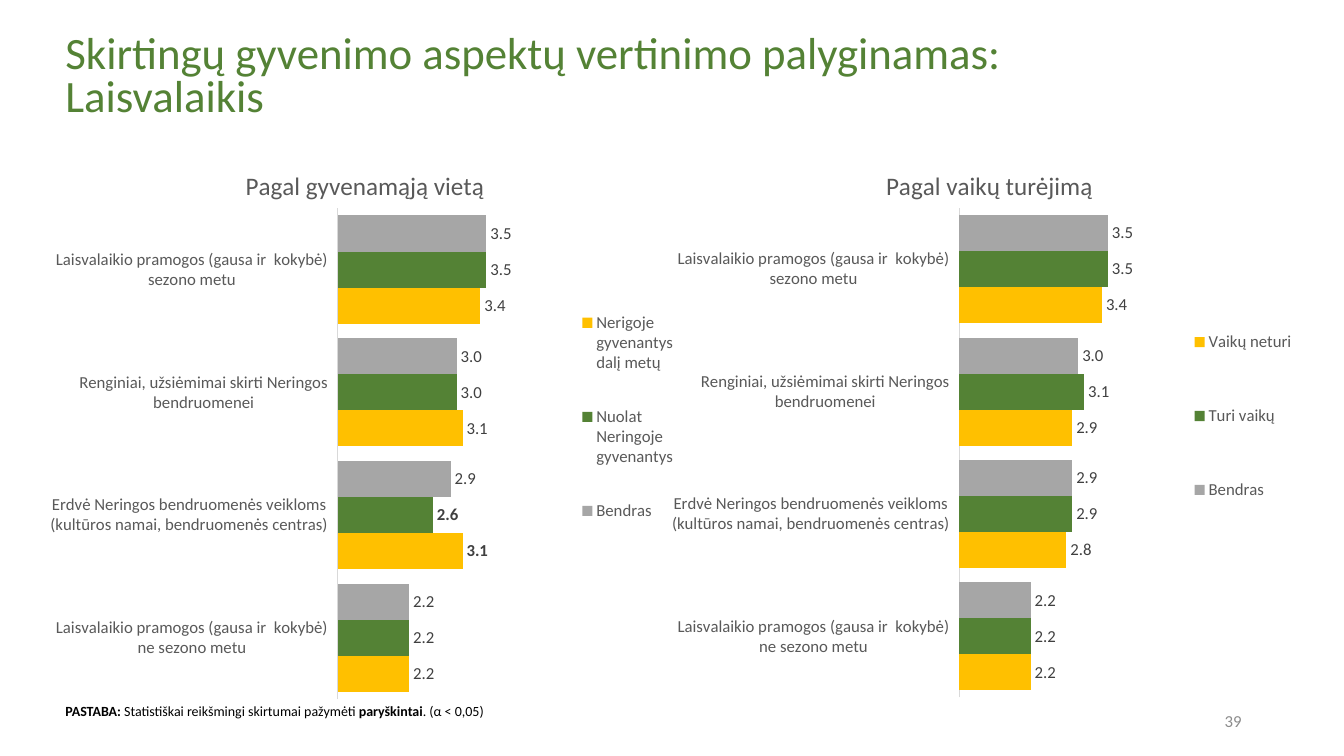
from pptx import Presentation
from pptx.chart.data import CategoryChartData as Data
from pptx.dml.color import RGBColor as RGB
from pptx.enum.chart import XL_CHART_TYPE as Kind, XL_LABEL_POSITION as Pos
from pptx.enum.chart import XL_LEGEND_POSITION as Side, XL_TICK_MARK as Tick
from pptx.enum.chart import XL_TICK_LABEL_POSITION as Spot
from pptx.enum.text import MSO_ANCHOR as Anchor, PP_ALIGN as Align
from pptx.oxml.ns import qn
from pptx.oxml.xmlchemy import OxmlElement as Node
from pptx.util import Inches, Pt

WIDE, HIGH = Inches(13.33), Inches(7.5)
COLS, ROWS = 160, 90
HUES = {"green": "548235", "gold": "FFC000", "grey": "A6A6A6", "text": "595959",
        "value": "404040", "axis": "D9D9D9", "page": "8C8C8C", "black": "000000"}
FORM = "#,##0.0"
TOPICS = [
    "Laisvalaikio pramogos (gausa ir  kokybė) sezono metu",
    "Renginiai, užsiėmimai skirti Neringos bendruomenei",
    "Erdvė Neringos bendruomenės veikloms (kultūros namai, bendruomenės centras)",
    "Laisvalaikio pramogos (gausa ir  kokybė) ne sezono metu",
]
TOTAL = ("Bendras", [3.5, 3.0, 2.9, 2.2])


def hue(name):
    return RGB.from_string(HUES[name])


def put(item, form):
    for key, val in form.items():
        setattr(item, key, val)


def ink(font, size, name, bold=False):
    put(font, {"name": "Calibri", "size": Pt(size), "bold": bold})
    font.color.rgb = hue(name)


def area(col, row, cols, rows):
    """Turn grid cells into slide lengths."""
    return (int(WIDE * col / COLS), int(HIGH * row / ROWS),
            int(WIDE * cols / COLS), int(HIGH * rows / ROWS))


def text(slide, cells, runs, size, name, anchor=Anchor.TOP, **form):
    frame = slide.shapes.add_textbox(*area(*cells)).text_frame
    put(frame, {"word_wrap": True, "vertical_anchor": anchor})
    para = frame.paragraphs[0]
    put(para, form)
    for words, bold in runs:
        run = para.add_run()
        run.text = words
        ink(run.font, size, name, bold)


def place(part, index, inner=False, **spots):
    """Fix a chart part at shares of the chart's size."""
    for old in part.findall(qn("c:layout")):
        part.remove(old)
    layout, manual = Node("c:layout"), Node("c:manualLayout")
    layout.append(manual)
    marks = {"layoutTarget": "inner"} if inner else {}
    marks.update({"xMode": "edge", "yMode": "edge"}, **spots)
    for tag, val in marks.items():
        node = Node("c:" + tag)
        node.set("val", str(val))
        manual.append(node)
    part.insert(index, layout)


def axes(chart):
    axis = chart.category_axis
    put(axis, {"reverse_order": True, "major_tick_mark": Tick.NONE,
               "minor_tick_mark": Tick.NONE, "has_major_gridlines": False,
               "tick_label_position": Spot.LOW})
    ink(axis.tick_labels.font, 12, "text")
    axis.format.line.color.rgb = hue("axis")
    axis.format.line.width = Pt(0.75)
    put(chart.value_axis, {"minimum_scale": 1, "maximum_scale": 5,
                           "has_major_gridlines": False, "visible": False})


def paint(row, name, bold):
    """Colour one series and label its bars."""
    row.format.fill.solid()
    row.format.fill.fore_color.rgb = hue(name)
    row.invert_if_negative = False
    tags = row.data_labels
    put(tags, {"show_value": True, "position": Pos.OUTSIDE_END,
               "number_format": FORM, "number_format_is_linked": False})
    ink(tags.font, 12, "value")
    for spot in bold:
        tag = row.points[spot].data_label
        ink(tag.font, 12, "value", True)
        tag.position = Pos.OUTSIDE_END


def bars(slide, cells, title, left, rows, key, bold=()):
    data = Data(number_format=FORM)
    data.categories = TOPICS
    for name, vals in rows:
        data.add_series(name, vals)
    chart = slide.shapes.add_chart(Kind.BAR_CLUSTERED, *area(*cells), data).chart
    ink(chart.font, 10, "black")

    # Heading
    chart.has_title = True
    head = chart.chart_title
    head.text_frame.text = title
    ink(head.text_frame.paragraphs[0].runs[0].font, 18, "text")
    place(head._element, 1, x=left, y=0.04)

    # Bars
    axes(chart)
    plot = chart.plots[0]
    put(plot, {"gap_width": 40, "overlap": 0, "vary_by_categories": False})
    for row, name in zip(plot.series, ("grey", "green", "gold")):
        paint(row, name, () if name == "grey" else bold)
    place(chart._chartSpace.chart.plotArea, 0, True, x=0.454, y=0.118, w=0.378, h=0.852)

    # Legend
    chart.has_legend = True
    put(chart.legend, {"position": Side.RIGHT, "include_in_layout": False})
    ink(chart.legend.font, 12, "text")
    place(chart.legend._element, 1, x=key, y=0.24, w=0.17, h=0.48)


def main():
    deck = Presentation()
    put(deck, {"slide_width": WIDE, "slide_height": HIGH})
    slide = deck.slides.add_slide(deck.slide_layouts[6])

    # Page number and title
    text(slide, (113, 83.4, 36, 4.8), [("39", False)], 12, "page",
         Anchor.MIDDLE, alignment=Align.RIGHT)
    text(slide, (6.6, 3.1, 122.6, 12.4),
         [("Skirtingų gyvenimo aspektų vertinimo palyginamas: Laisvalaikis", False)],
         32, "green", Anchor.MIDDLE, line_spacing=0.8)

    # Charts by home and by children
    bars(slide, (6, 16.7, 75.1, 68.6), "Pagal gyvenamąją vietą", 0.3,
         [TOTAL, ("Nuolat Neringoje gyvenantys", [3.5, 3.0, 2.6, 2.2]),
          ("Nerigoje gyvenantys dalį metų", [3.4, 3.1, 3.1, 2.2])], 0.83, bold=(2,))
    bars(slide, (80, 16.7, 75.1, 68.4), "Pagal vaikų turėjimą", 0.33,
         [TOTAL, ("Turi vaikų", [3.5, 3.1, 2.9, 2.2]),
          ("Vaikų neturi", [3.4, 2.9, 2.8, 2.2])], 0.82)

    # Note
    text(slide, (6.6, 83, 134.9, 3.2),
         [("PASTABA:", True), (" Statistiškai reikšmingi skirtumai pažymėti ", False),
          ("paryškintai", True), (". (α < 0,05)", False)],
         10, "black", alignment=Align.JUSTIFY)
    deck.save("out.pptx")


if __name__ == "__main__":
    main()
